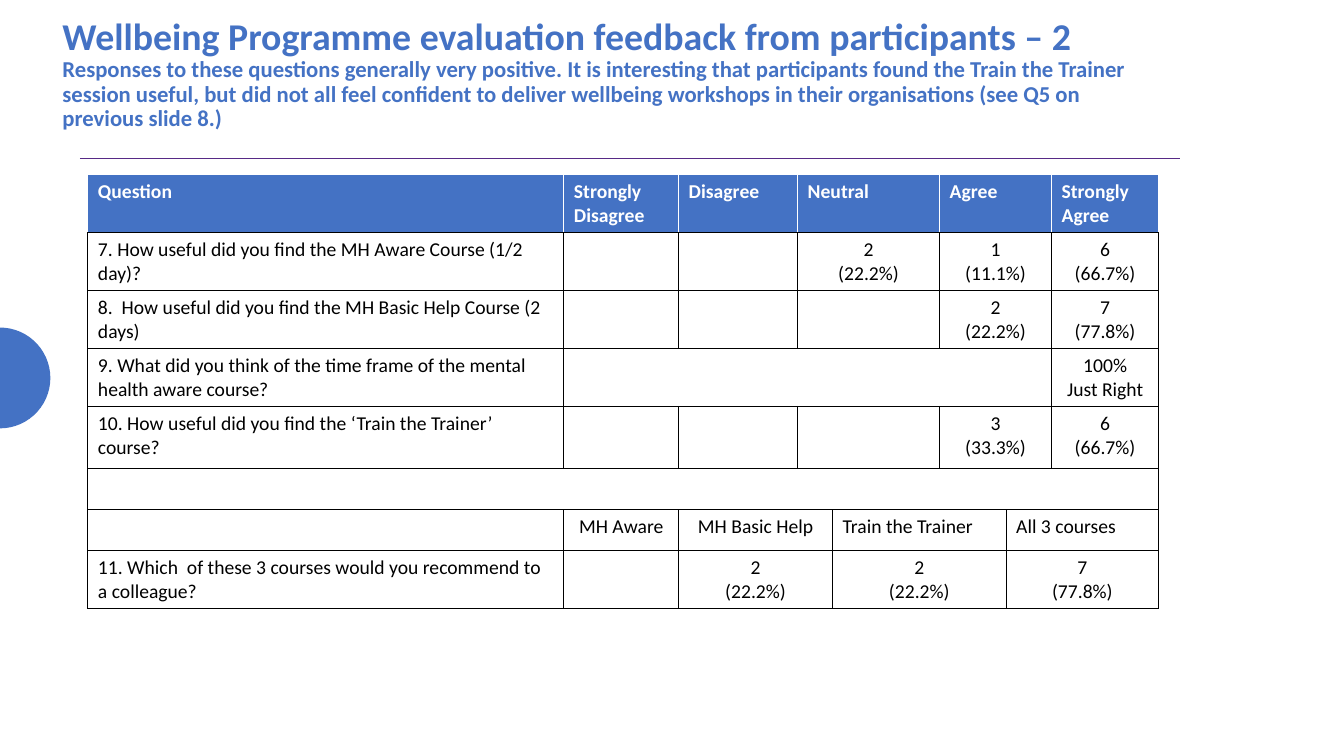
from dataclasses import dataclass
from math import cos, radians, sin
from typing import Any

from lxml import etree
from pptx import Presentation
from pptx import util as u
from pptx.dml import color
from pptx.enum import shapes, text
from pptx.oxml import ns

BLUE, PURPLE, BLACK, WHITE = "4472C4", "572A86", "000000", "FFFFFF"
LEFT, CENTER = text.PP_ALIGN.LEFT, text.PP_ALIGN.CENTER
COLUMN_WIDTHS = [340, 82, 85, 25, 76.5, 47.5, 32.5, 76.5]
ROW_HEIGHTS = [41.4, 41.4, 41.4, 41.4, 44.3, 29.4, 29.4, 41.4]


@dataclass
class Entry:
    words: str = ""
    span: int = 1
    align: Any = CENTER


def left(words: str, span: int = 1) -> Entry:
    return Entry(words, span, LEFT)


ROWS = [
    [left("Question"), left("Strongly Disagree"), left("Disagree"),
     left("Neutral", 2), left("Agree", 2), left("Strongly Agree")],
    [left("7. How useful did you find the MH Aware Course (1/2 day)?"), Entry(), Entry(),
     Entry("2\n(22.2%)", 2), Entry("1\n(11.1%)", 2), Entry("6\n(66.7%)")],
    [left("8.  How useful did you find the MH Basic Help Course (2 days)"), Entry(), Entry(),
     Entry(span=2), Entry("2\n(22.2%)", 2), Entry("7\n(77.8%)")],
    [left("9. What did you think of the time frame of the mental health aware course?"),
     Entry(span=6), Entry("100%\nJust Right")],
    [left("10. How useful did you find the ‘Train the Trainer’ course?"), Entry(), Entry(),
     Entry(span=2), Entry("3\n(33.3%)", 2), Entry("6\n(66.7%)")],
    [Entry(span=8)],
    [Entry(), Entry("MH Aware"), Entry("MH Basic Help", 2),
     left("Train the Trainer", 2), left("All 3 courses", 2)],
    [left("11. Which  of these 3 courses would you recommend to a colleague?"), Entry(),
     Entry("2\n(22.2%)", 2), Entry("2\n(22.2%)", 2), Entry("7\n(77.8%)", 2)],
]


def rgb(value: str) -> color.RGBColor:
    return color.RGBColor.from_string(value)


def set_font(font: Any, size: float, hex_color: str, bold: bool) -> None:
    for name, value in {"name": "Calibri", "size": u.Pt(size), "bold": bold}.items():
        setattr(font, name, value)
    font.color.rgb = rgb(hex_color)


def draw_half_circle(slide: Any, middle: float, radius: float) -> None:
    points = [(u.Pt(radius * cos(radians(angle))), u.Pt(middle + radius * sin(radians(angle))))
              for angle in range(-90, 91, 6)]
    builder = slide.shapes.build_freeform(*points[0], scale=1.0)
    builder.add_line_segments(points[1:], close=True)
    shape = builder.convert_to_shape()
    shape.shadow.inherit = False
    shape.fill.solid()
    shape.fill.fore_color.rgb = rgb(BLUE)
    shape.line.fill.background()


def draw_rule(slide: Any, start: float, end: float, top: float) -> None:
    connector = slide.shapes.add_connector(
        shapes.MSO_CONNECTOR.STRAIGHT, u.Pt(start), u.Pt(top), u.Pt(end), u.Pt(top))
    connector.line.color.rgb = rgb(PURPLE)
    connector.line.width = u.Pt(0.5)
    etree.SubElement(connector._element.spPr, ns.qn("a:effectLst"))


def draw_title(slide: Any, heading: str, summary: str) -> None:
    box = slide.shapes.add_textbox(u.Pt(37.5), u.Pt(18), u.Pt(795.5), u.Pt(70.5))
    frame = box.text_frame
    frame.word_wrap = True
    frame.vertical_anchor = text.MSO_ANCHOR.MIDDLE
    paragraph = frame.paragraphs[0]
    paragraph.line_spacing = 0.9
    for words, size in ((heading, 27), (summary, 16.2)):
        if paragraph.runs:
            paragraph.add_line_break()
        run = paragraph.add_run()
        run.text = words
        set_font(run.font, size, BLUE, True)


def format_cell(cell: Any, header: bool) -> None:
    properties = cell._tc.get_or_add_tcPr()
    for side in "LRTB":
        line = etree.SubElement(properties, ns.qn(f"a:ln{side}"), w=str(u.Pt(1)))
        fill = etree.SubElement(line, ns.qn("a:solidFill"))
        etree.SubElement(fill, ns.qn("a:srgbClr"), val=WHITE if header and side != "B" else BLACK)
    if header:
        cell.fill.solid()
        cell.fill.fore_color.rgb = rgb(BLUE)
    else:
        cell.fill.background()


def fill_row(table: Any, row: int, entries: list[Entry]) -> None:
    header = row == 0
    for cell in table.rows[row].cells:
        format_cell(cell, header)
    column = 0
    for entry in entries:
        cell = table.cell(row, column)
        if entry.span > 1:
            cell.merge(table.cell(row, column + entry.span - 1))
        if entry.words:
            cell.text_frame.text = entry.words
            for paragraph in cell.text_frame.paragraphs:
                paragraph.alignment = entry.align
                set_font(paragraph.runs[0].font, 14, WHITE if header else BLACK, header)
        column += entry.span


def draw_table(slide: Any) -> None:
    table = slide.shapes.add_table(
        len(ROWS), len(COLUMN_WIDTHS), u.Pt(62.8), u.Pt(124.8),
        u.Pt(sum(COLUMN_WIDTHS)), u.Pt(sum(ROW_HEIGHTS))).table
    table.first_row = table.horz_banding = False
    for column, width in zip(table.columns, COLUMN_WIDTHS):
        column.width = u.Pt(width)
    for row, height in zip(table.rows, ROW_HEIGHTS):
        row.height = u.Pt(height)
    for index, entries in enumerate(ROWS):
        fill_row(table, index, entries)


def main() -> None:
    presentation = Presentation()
    presentation.slide_width, presentation.slide_height = u.Pt(960), u.Pt(540)
    slide = presentation.slides.add_slide(presentation.slide_layouts[6])
    draw_half_circle(slide, 270, 36)
    draw_rule(slide, 57, 843, 113)
    draw_title(
        slide,
        "Wellbeing Programme evaluation feedback from participants – 2",
        "Responses to these questions generally very positive. It is interesting that "
        "participants found the Train the Trainer session useful, but did not all feel "
        "confident to deliver wellbeing workshops in their organisations (see Q5 on "
        "previous slide 8.)")
    draw_table(slide)
    presentation.save("out.pptx")


if __name__ == "__main__":
    main()
